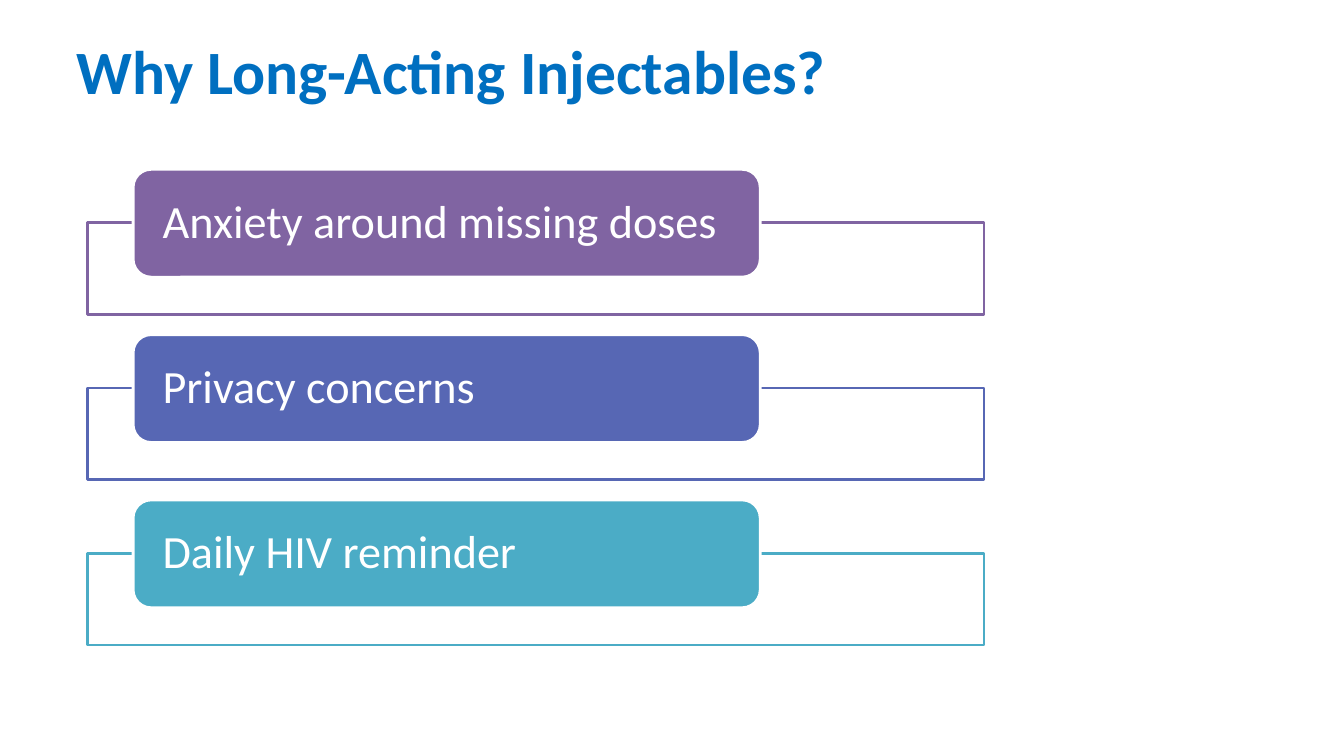
from dataclasses import dataclass

from pptx import Presentation
from pptx.dml.color import RGBColor
from pptx.enum import shapes, text
from pptx.util import Inches, Pt

FONT = "Calibri"
WHITE = "FFFFFF"
FIRST_TOP = 1.68
PITCH = 1.64
FRAME_DROP = 0.53


@dataclass
class Reason:
    label: str
    color: str


REASONS = [
    Reason("Anxiety around missing doses", "8064A2"),
    Reason("Privacy concerns", "5767B4"),
    Reason("Daily HIV reminder", "4BACC6"),
]


def rgb(color: str) -> RGBColor:
    return RGBColor.from_string(color)


def write(tf, words: str, size: float, color: str, inset: float = 0, bold: bool = False):
    """Fill a text frame with one left-aligned, vertically centred paragraph."""
    tf.word_wrap = True
    tf.auto_size = text.MSO_AUTO_SIZE.NONE
    tf.vertical_anchor = text.MSO_ANCHOR.MIDDLE
    tf.margin_left = tf.margin_right = Inches(inset)
    tf.margin_top = tf.margin_bottom = 0
    p = tf.paragraphs[0]
    p.text = words
    p.alignment = text.PP_ALIGN.LEFT
    p.font.name = FONT
    p.font.size = Pt(size)
    p.font.bold = bold
    p.font.color.rgb = rgb(color)
    return p


def add_box(s, kind, left: float, top: float, width: float, height: float,
            fill: str, line: str):
    sp = s.shapes.add_shape(kind, Inches(left), Inches(top), Inches(width), Inches(height))
    sp.shadow.inherit = False
    sp.fill.solid()
    sp.fill.fore_color.rgb = rgb(fill)
    sp.line.color.rgb = rgb(line)
    sp.line.width = Pt(2)
    return sp


def add_reason(s, reason: Reason, top: float) -> None:
    """Draw the outlined frame with the coloured label over its top edge."""
    add_box(s, shapes.MSO_SHAPE.RECTANGLE, 0.87, top + FRAME_DROP, 8.89, 0.91,
            WHITE, reason.color)
    label = add_box(s, shapes.MSO_SHAPE.ROUNDED_RECTANGLE, 1.32, top, 6.22, 1.07,
                    reason.color, WHITE)
    p = write(label.text_frame, reason.label, 33, WHITE, inset=0.24)
    p.line_spacing = 0.9


def main() -> None:
    prs = Presentation()
    prs.slide_width, prs.slide_height = Inches(13.33), Inches(7.5)
    s = prs.slides.add_slide(prs.slide_layouts[5])

    title = s.shapes.title
    title.left, title.top = Inches(0.76), Inches(0.32)
    title.width, title.height = Inches(7.94), Inches(0.74)
    write(title.text_frame, "Why Long-Acting Injectables?", 44, "006FC0", bold=True)

    for i, reason in enumerate(REASONS):
        add_reason(s, reason, FIRST_TOP + i * PITCH)

    prs.save("out.pptx")


if __name__ == "__main__":
    main()
